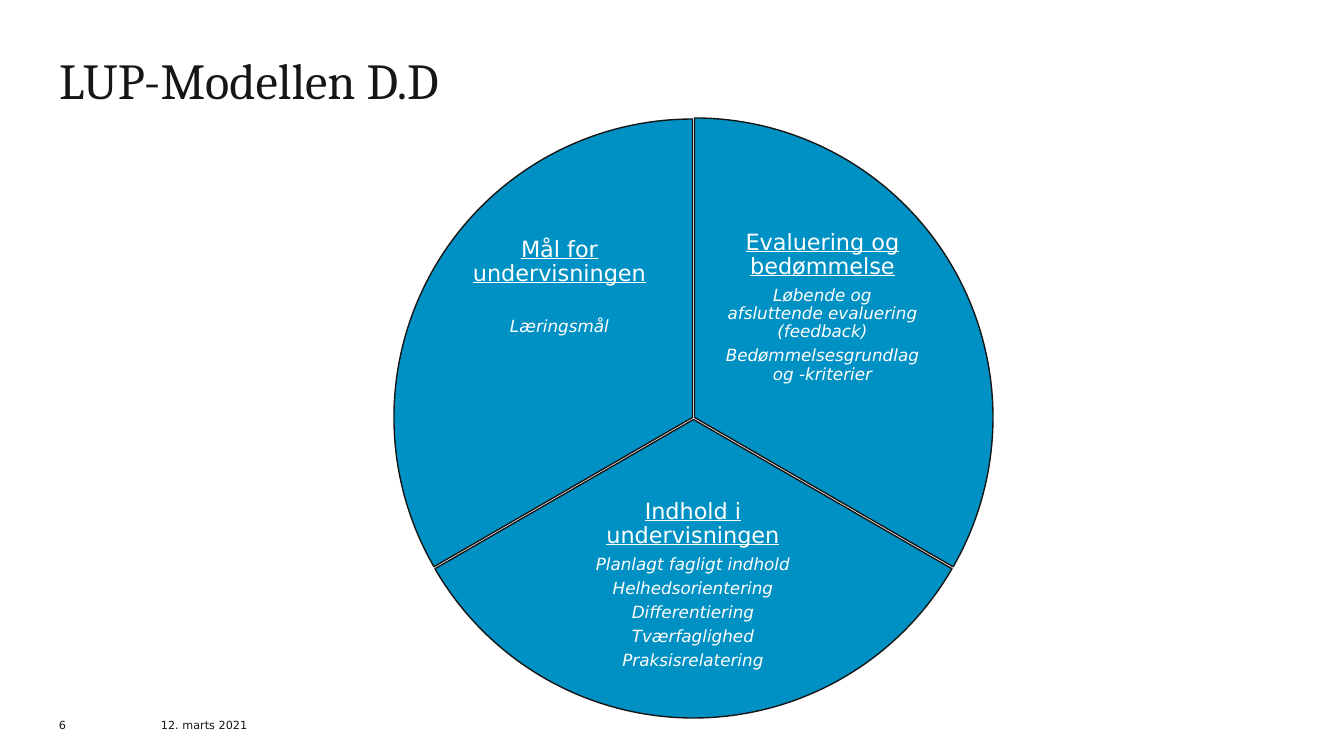
from pptx import Presentation
from pptx.dml.color import RGBColor
from pptx.enum.shapes import MSO_SHAPE
from pptx.enum.text import MSO_ANCHOR, MSO_AUTO_SIZE, PP_ALIGN
from pptx.util import Pt

PIE = MSO_SHAPE.PIE
TOP, BOTTOM = MSO_ANCHOR.TOP, MSO_ANCHOR.BOTTOM
LEFT, CENTER = PP_ALIGN.LEFT, PP_ALIGN.CENTER
PX = 914400 / 100.8
COLORS = {"ink": "161616", "wedge": "0091C4", "label": "FFFFFF"}
SERIF, SANS = "Cambria", "DejaVu Sans"


def px(*lengths):
    return [round(length * PX) for length in lengths]


def style_frame(frame, anchor, inset=0):
    frame.word_wrap = True
    frame.auto_size = MSO_AUTO_SIZE.NONE
    frame.vertical_anchor = anchor
    frame.margin_left = frame.margin_right = round(inset * PX)
    frame.margin_top = frame.margin_bottom = round(inset * PX)


deck = Presentation()
deck.slide_width, deck.slide_height = px(1344, 756)
page = deck.slides.add_slide(deck.slide_layouts[5])

title = page.shapes.title
title.left, title.top, title.width, title.height = px(59, 59, 1021, 103)
style_frame(title.text_frame, TOP)
title.text_frame.text = "LUP-Modellen D.D"
para = title.text_frame.paragraphs[0]
para.alignment = LEFT
para.line_spacing = 0.83
para.font.name, para.font.size = SERIF, Pt(36)
para.font.color.rgb = RGBColor.from_string(COLORS["ink"])

for text, left, width in [("12. marts 2021", 161, 140), ("6", 59, 30)]:
    footer = page.shapes.add_textbox(*px(left, 712, width, 20))
    style_frame(footer.text_frame, BOTTOM)
    para = footer.text_frame.paragraphs[0]
    para.text = text
    para.font.name, para.font.size = SANS, Pt(8)
    para.font.color.rgb = RGBColor.from_string(COLORS["ink"])

# Wedge box, start and end angle in degrees, text box, heading, gap below it in points, items
wedges = [
    ((396, 118, 597, 599), 270, 30, (721, 229, 203, 200),
     "Evaluering og bedømmelse", 5.6,
     ["Løbende og afsluttende evaluering (feedback)",
      "Bedømmelsesgrundlag og -kriterier"]),
    ((395, 121, 597, 597), 30, 150, (558, 498, 270, 184),
     "Indhold i undervisningen", 5.6,
     ["Planlagt fagligt indhold", "Helhedsorientering", "Differentiering",
      "Tværfaglighed", "Praksisrelatering"]),
    ((394, 119, 597, 597), 150, 270, (458, 236, 203, 199),
     "Mål for undervisningen", 23, ["Læringsmål"]),
]

for wedge_box, start, end, text_box, heading, heading_gap, items in wedges:
    wedge = page.shapes.add_shape(PIE, *px(*wedge_box))
    wedge.shadow.inherit = False
    # Angles are stored in 60000ths of a degree, adjustments in 100000ths
    wedge.adjustments[0] = start * 0.6
    wedge.adjustments[1] = end * 0.6
    wedge.fill.solid()
    wedge.fill.fore_color.rgb = RGBColor.from_string(COLORS["wedge"])
    wedge.line.color.rgb = RGBColor.from_string(COLORS["ink"])
    wedge.line.width = Pt(1)

    label = page.shapes.add_textbox(*px(*text_box))
    style_frame(label.text_frame, TOP, 2)
    label.text_frame.text = "\n".join([heading] + items)
    for index, para in enumerate(label.text_frame.paragraphs):
        is_heading = index == 0
        para.alignment = CENTER
        para.line_spacing = 0.9
        para.space_after = Pt(heading_gap if is_heading else 4.2)
        para.font.name = SANS
        para.font.size = Pt(16 if is_heading else 12)
        para.font.underline = is_heading
        para.font.italic = not is_heading
        para.font.color.rgb = RGBColor.from_string(COLORS["label"])

deck.save("out.pptx")
